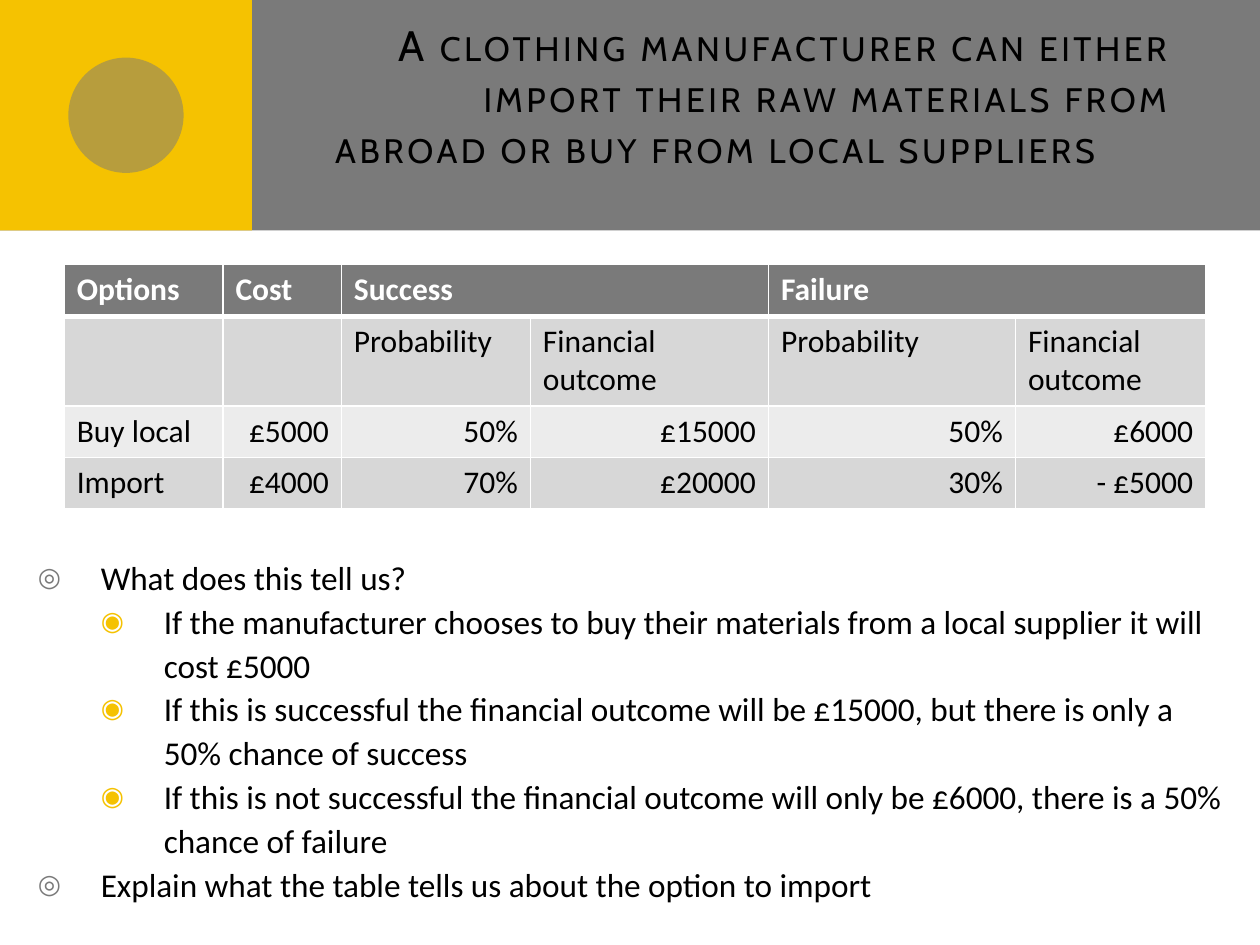
from dataclasses import dataclass

from lxml.etree import SubElement
from pptx import Presentation
from pptx.dml.color import RGBColor
from pptx.enum.shapes import MSO_SHAPE as Shape
from pptx.enum.text import MSO_ANCHOR as Anchor, MSO_AUTO_SIZE as AutoSize, PP_ALIGN as Align
from pptx.oxml.ns import qn
from pptx.util import Inches, Pt


@dataclass(frozen=True)
class Theme:
    grey: str = "7A7A7A"
    yellow: str = "F5C201"
    black: str = "000000"
    white: str = "FFFFFF"
    bands: tuple = ("D7D7D7", "ECECEC")
    title_font: str = "Cabin"
    body_font: str = "Calibri"
    title_size: float = 24.3
    body_size: float = 19
    table_size: float = 18


TITLE = ("A clothing manufacturer can either import their raw materials "
         "from abroad or buy from local suppliers")
ROWS = [
    ["Options", "Cost", "Success", "", "Failure", ""],
    ["", "", "Probability", "Financial outcome", "Probability", "Financial outcome"],
    ["Buy local", "£5000", "50%", "£15000", "50%", "£6000"],
    ["Import", "£4000", "70%", "£20000", "30%", "- £5000"],
]
COLUMN_WIDTHS = [1.26, 0.94, 1.5, 1.89, 1.96, 1.51]
ROW_HEIGHTS = [0.41, 0.69, 0.41, 0.41]
POINTS = [
    (0, "What does this tell us?"),
    (1, "If the manufacturer chooses to buy their materials from a local supplier "
        "it will cost £5000"),
    (1, "If this is successful the financial outcome will be £15000, "
        "but there is only a 50% chance of success"),
    (1, "If this is not successful the financial outcome will only be £6000, "
        "there is a 50% chance of failure"),
    (0, "Explain what the table tells us about the option to import"),
]


def rgb(color):
    return RGBColor.from_string(color)


class Deck:
    """Holds the theme and current slide and draws each kind of element."""

    def __init__(self, theme, width=10, height=7.5):
        self.theme = theme
        self.prs = Presentation()
        self.prs.slide_width, self.prs.slide_height = Inches(width), Inches(height)
        self.s = self.prs.slides.add_slide(self.prs.slide_layouts[1])
        self.backdrop_count = 0

    def place(self, sp, left, top, width, height):
        sp.left, sp.top = Inches(left), Inches(top)
        sp.width, sp.height = Inches(width), Inches(height)

    def style(self, p, font, size, color, bold=False):
        for r in p.runs:
            r.font.name, r.font.size, r.font.bold = font, Pt(size), bold
            r.font.color.rgb = rgb(color)

    def backdrop(self, kind, box, color, alpha=None):
        sp = self.s.shapes.add_shape(kind, *map(Inches, box))
        sp.shadow.inherit = False
        sp.fill.solid()
        sp.fill.fore_color.rgb = rgb(color)
        sp.line.fill.background()
        if alpha:
            clr = sp._element.spPr.find(f".//{qn('a:srgbClr')}")
            SubElement(clr, qn("a:alpha"), val=str(alpha * 1000))
        self.s.shapes._spTree.insert(2 + self.backdrop_count, sp._element)
        self.backdrop_count += 1

    def title(self, text, box):
        sp = self.s.shapes.title
        self.place(sp, *box)
        tf = sp.text_frame
        tf.text = text
        tf.word_wrap, tf.auto_size = True, AutoSize.NONE
        tf.vertical_anchor, tf.margin_bottom = Anchor.MIDDLE, Inches(0.67)
        p = tf.paragraphs[0]
        p.alignment = Align.RIGHT
        self.style(p, self.theme.title_font, self.theme.title_size, self.theme.black)
        for r in p.runs:
            r.font._element.set("cap", "small")
            r.font._element.set("spc", "200")

    def bullets(self, points, box, first_line):
        sp = self.s.placeholders[1]
        self.place(sp, *box)
        tf = sp.text_frame
        tf.text = "\n".join(text for _, text in points)
        tf.word_wrap, tf.auto_size = True, AutoSize.NONE
        tf.margin_top = Inches(first_line)
        marks = [("◎", self.theme.grey), ("◉", self.theme.yellow)]
        for p, (level, _) in zip(tf.paragraphs, points):
            p.level, p.line_spacing, p.space_before = level, 1.1, Pt(0)
            self.style(p, self.theme.body_font, self.theme.body_size, self.theme.black)
            mark, color = marks[level]
            pPr = p._p.get_or_add_pPr()
            pPr.set("marL", str(Inches(0.5 * (level + 1))))
            pPr.set("indent", str(Inches(-0.5)))
            SubElement(SubElement(pPr, qn("a:buClr")), qn("a:srgbClr"), val=color)
            SubElement(pPr, qn("a:buSzPct"), val="80000")
            SubElement(pPr, qn("a:buChar"), char=mark)

    def borders(self, cell, bottom):
        tcPr = cell._tc.get_or_add_tcPr()
        for side, width in zip("LRTB", (1, 1, 1, bottom)):
            ln = SubElement(tcPr, qn(f"a:ln{side}"), w=str(Pt(width)))
            SubElement(SubElement(ln, qn("a:solidFill")), qn("a:srgbClr"), val=self.theme.white)

    def table(self, rows, widths, heights, left, top):
        th = self.theme
        table = self.s.shapes.add_table(
            len(rows), len(widths), Inches(left), Inches(top),
            Inches(sum(widths)), Inches(sum(heights))).table
        for column, width in zip(table.columns, widths):
            column.width = Inches(width)
        for row, height in zip(table.rows, heights):
            row.height = Inches(height)
        for i, row in enumerate(rows):
            header = i == 0
            for j, text in enumerate(row):
                cell = table.cell(i, j)
                self.borders(cell, 3 if header else 1)
                cell.fill.solid()
                cell.fill.fore_color.rgb = rgb(th.grey if header else th.bands[(i - 1) % 2])
                cell.text = text
                p = cell.text_frame.paragraphs[0]
                p.alignment = Align.RIGHT if i > 1 and j else Align.LEFT
                self.style(p, th.body_font, th.table_size,
                           th.white if header else th.black, header)
        for j in (2, 4):
            table.cell(0, j).merge(table.cell(0, j + 1))


def main():
    theme = Theme()
    deck = Deck(theme)
    band = 1.83
    dot = band / 2
    deck.backdrop(Shape.RECTANGLE, (0, 0, 10, band), theme.grey)
    deck.backdrop(Shape.RECTANGLE, (0, 0, 2, band), theme.yellow)
    deck.backdrop(Shape.OVAL, (1 - dot / 2, dot / 2, dot, dot), theme.grey, alpha=50)
    deck.title(TITLE, (2.56, 0.44, 6.83, 1.25))
    deck.bullets(POINTS, (0.2, 2.1, 9.61, 5.28), first_line=2.29)
    deck.table(ROWS, COLUMN_WIDTHS, ROW_HEIGHTS, 0.51, 2.1)
    deck.prs.save("out.pptx")


if __name__ == "__main__":
    main()
